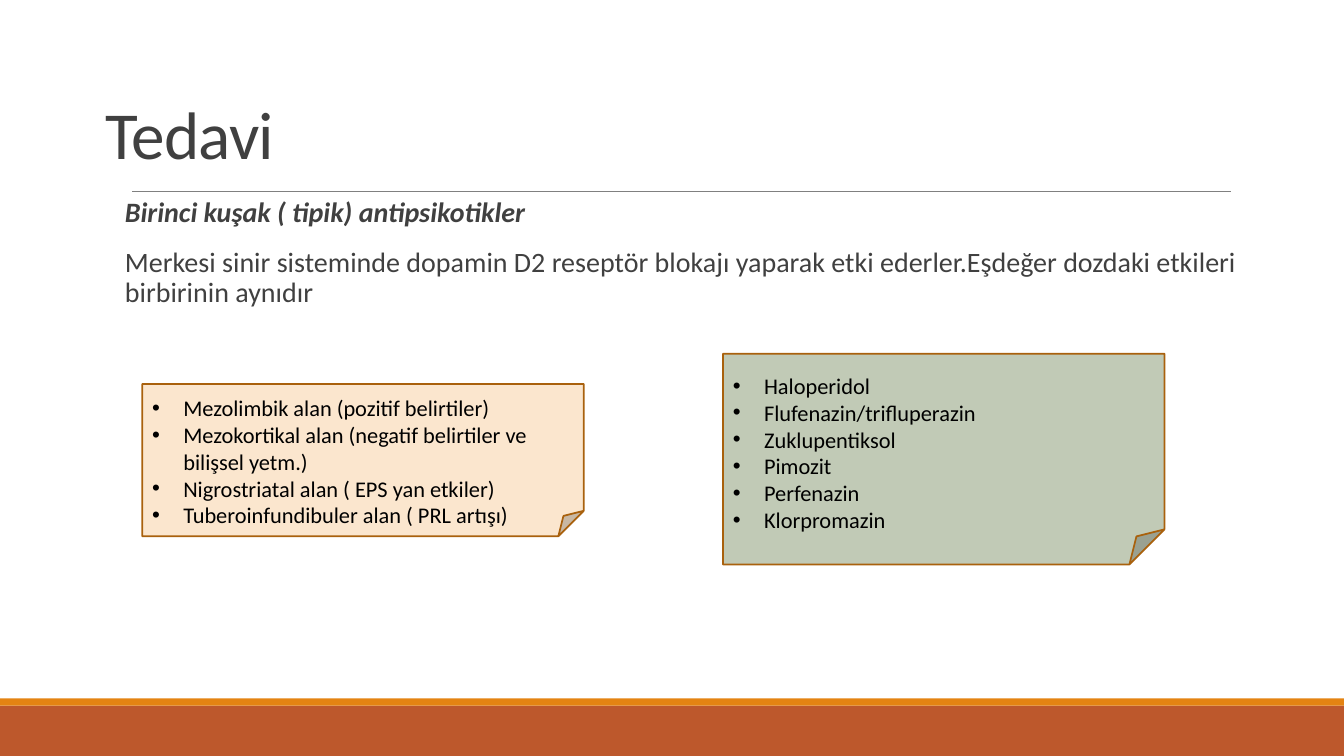
from pptx import Presentation
from pptx.dml.color import RGBColor as RGB
from pptx.enum.shapes import MSO_CONNECTOR as LINE, MSO_SHAPE as SHAPE
from pptx.enum.text import MSO_ANCHOR as ANCHOR, PP_ALIGN as ALIGN
from pptx.oxml.ns import qn
from pptx.util import Inches, Pt
from lxml.etree import SubElement as Sub

GREY = RGB(0x40, 0x40, 0x40)
RULE = RGB(0x80, 0x80, 0x80)
BLACK = RGB(0, 0, 0)
RUST = RGB(0xBD, 0x58, 0x2C)
ORANGE = RGB(0xE4, 0x83, 0x12)
BROWN = RGB(0xA9, 0x61, 0x0D)
CREAM = RGB(0xFB, 0xE6, 0xCE)
SAGE = RGB(0xC1, 0xCA, 0xB6)

TITLE = "Tedavi"
BODY = [
    ("Birinci kuşak ( tipik) antipsikotikler", True),
    ("Merkesi sinir sisteminde dopamin D2 reseptör blokajı yaparak etki ederler."
     "Eşdeğer dozdaki etkileri birbirinin aynıdır", False),
]
AREAS = [
    "Mezolimbik alan (pozitif belirtiler)",
    "Mezokortikal alan (negatif belirtiler ve bilişsel yetm.)",
    "Nigrostriatal alan ( EPS yan etkiler)",
    "Tuberoinfundibuler alan ( PRL artışı)",
]
DRUGS = ["Haloperidol", "Flufenazin/trifluperazin", "Zuklupentiksol",
         "Pimozit", "Perfenazin", "Klorpromazin"]
BARS = [(7, 0.5, RUST), (6.93, 0.07, ORANGE)]
NOTES = [
    (AREAS, (1.41, 3.81, 4.38, 1.51), CREAM, 0.1),
    (DRUGS, (7.17, 3.51, 4.38, 2.09), SAGE, 0.18),
]

deck = Presentation()
deck.slide_width, deck.slide_height = Inches(13.33), Inches(7.5)
slide = deck.slides.add_slide(deck.slide_layouts[6])
shapes = slide.shapes


def set_frame(frame, left=0.1, top=0.05, right=0.1, low=0.05, anchor=ANCHOR.TOP):
    frame.word_wrap = True
    frame.margin_left, frame.margin_top = Inches(left), Inches(top)
    frame.margin_right, frame.margin_bottom = Inches(right), Inches(low)
    frame.vertical_anchor = anchor


def add_text(frame, text, size=16, color=BLACK, strong=False, lead=1,
             before=0, after=0, track=0, bullet=False):
    first = not frame.paragraphs[0].runs
    para = frame.paragraphs[0] if first else frame.add_paragraph()
    para.alignment = ALIGN.LEFT
    para.line_spacing = lead
    para.space_before = Pt(0 if first else before)
    para.space_after = Pt(after)
    if bullet:
        props = para._p.get_or_add_pPr()
        props.set("marL", str(Inches(0.31)))
        props.set("indent", str(-Inches(0.31)))
        Sub(props, qn("a:buFont"), typeface="Arial")
        Sub(props, qn("a:buChar"), char="•")
    run = para.add_run()
    run.text = text
    font = run.font
    font.name, font.size = "Calibri", Pt(size)
    font.color.rgb = color
    font.bold = font.italic = strong
    if track:
        run._r.get_or_add_rPr().set("spc", str(int(track * 100)))


def add_box(kind, at, fill, edge=None):
    box = shapes.add_shape(kind, *map(Inches, at))
    box.shadow.inherit = False
    box.fill.solid()
    box.fill.fore_color.rgb = fill
    if edge is None:
        box.line.fill.background()
    else:
        box.line.color.rgb = edge
        box.line.width = Pt(1.25)
    return box


for top, height, fill in BARS:
    add_box(SHAPE.RECTANGLE, (0, top, 13.33, height), fill)

rule = shapes.add_connector(LINE.STRAIGHT, Inches(1.31), Inches(1.9),
                            Inches(12.21), Inches(1.9))
rule.line.color.rgb = RULE
rule.line.width = Pt(0.5)
Sub(rule._element.spPr, qn("a:effectLst"))

title = shapes.add_textbox(*map(Inches, (0.95, 0.18, 11, 1.59))).text_frame
set_frame(title, anchor=ANCHOR.BOTTOM)
add_text(title, TITLE, size=48, color=GREY, lead=0.85, track=-0.5)

body = shapes.add_textbox(*map(Inches, (1.14, 1.92, 11.91, 4.99))).text_frame
set_frame(body, left=0.1, right=0)
for text, strong in BODY:
    add_text(body, text, size=20, color=GREY, strong=strong,
             lead=0.9, before=12, after=2)

for items, at, fill, inset in NOTES:
    note = add_box(SHAPE.FOLDED_CORNER, at, fill, BROWN).text_frame
    set_frame(note, top=inset, low=0)
    for item in items:
        add_text(note, item, bullet=True)

deck.save("out.pptx")
